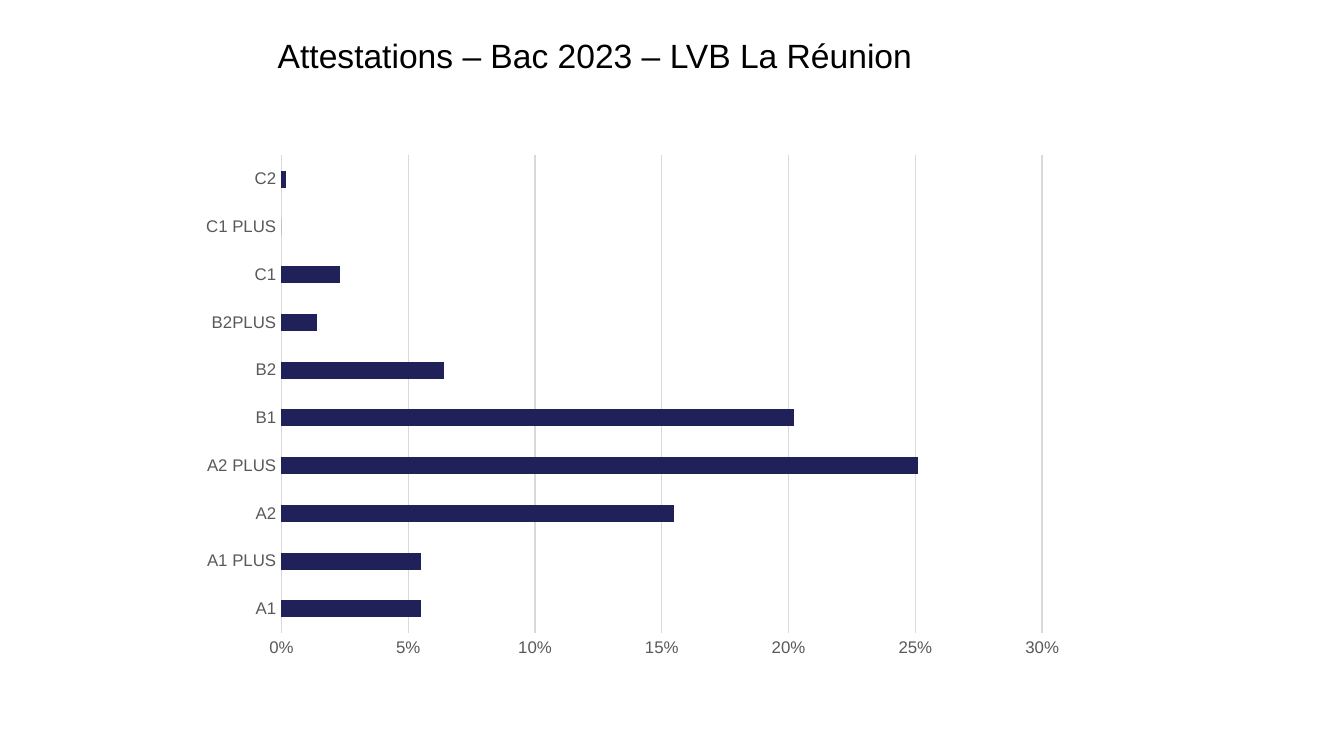
from dataclasses import dataclass

from pptx import Presentation
from pptx import util as u
from pptx.chart.data import CategoryChartData
from pptx.dml.color import RGBColor
from pptx.enum import chart as charts, text


@dataclass(frozen=True)
class Theme:
    face: str = "Arial"
    ink: RGBColor = RGBColor(0x00, 0x00, 0x00)
    label: RGBColor = RGBColor(0x59, 0x59, 0x59)
    grid: RGBColor = RGBColor(0xD9, 0xD9, 0xD9)
    bar: RGBColor = RGBColor(0x21, 0x21, 0x5A)
    title_size: u.Pt = u.Pt(18)
    chart_size: u.Pt = u.Pt(10)
    label_size: u.Pt = u.Pt(9)
    hairline: u.Pt = u.Pt(0.75)


theme = Theme()


def apply(target, values):
    for name, value in values.items():
        setattr(target, name, value)


def style_font(font, size, color):
    apply(font, {"name": theme.face, "size": size})
    font.color.rgb = color


deck = Presentation()
apply(deck, {"slide_width": u.Cm(25.4), "slide_height": u.Cm(14.28)})
page = deck.slides.add_slide(deck.slide_layouts[6])

# Share of attestations by level
shares = {
    "A1": 0.055,
    "A1 PLUS": 0.055,
    "A2": 0.155,
    "A2 PLUS": 0.251,
    "B1": 0.202,
    "B2": 0.064,
    "B2PLUS": 0.014,
    "C1": 0.023,
    "C1 PLUS": 0,
    "C2": 0.002,
}
data = CategoryChartData(number_format="0%")
data.categories = list(shares)
data.add_series("Series 1", list(shares.values()))

# Bar chart
chart = page.shapes.add_chart(
    charts.XL_CHART_TYPE.BAR_CLUSTERED,
    u.Cm(3.56), u.Cm(2.74), u.Cm(16.79), u.Cm(9.88), data,
).chart
apply(chart, {"has_legend": False, "has_title": False})
style_font(chart.font, theme.chart_size, theme.ink)

plot = chart.plots[0]
apply(plot, {"gap_width": 182, "vary_by_categories": False})
bars = plot.series[0].format.fill
bars.solid()
bars.fore_color.rgb = theme.bar

# Axes and gridlines
levels, percent = chart.category_axis, chart.value_axis
for axis in (levels, percent):
    apply(axis, {"major_tick_mark": charts.XL_TICK_MARK.NONE,
                 "minor_tick_mark": charts.XL_TICK_MARK.NONE})
    style_font(axis.tick_labels.font, theme.label_size, theme.label)
apply(levels, {"has_major_gridlines": False})
apply(percent, {"has_major_gridlines": True, "minimum_scale": 0,
                "maximum_scale": 0.3, "major_unit": 0.05})
apply(percent.tick_labels, {"number_format": "0%",
                            "number_format_is_linked": False})
percent.format.line.fill.background()
for line in (levels.format.line, percent.major_gridlines.format.line):
    line.color.rgb = theme.grid
    line.width = theme.hairline

# Title
box = page.shapes.add_textbox(u.Cm(5), u.Cm(0.53), u.Cm(14.76), u.Cm(1.02))
apply(box.text_frame, {"word_wrap": True,
                       "auto_size": text.MSO_AUTO_SIZE.SHAPE_TO_FIT_TEXT})
span = box.text_frame.paragraphs[0].add_run()
span.text = "Attestations – Bac 2023 – LVB La Réunion"
style_font(span.font, theme.title_size, theme.ink)

deck.save("out.pptx")
